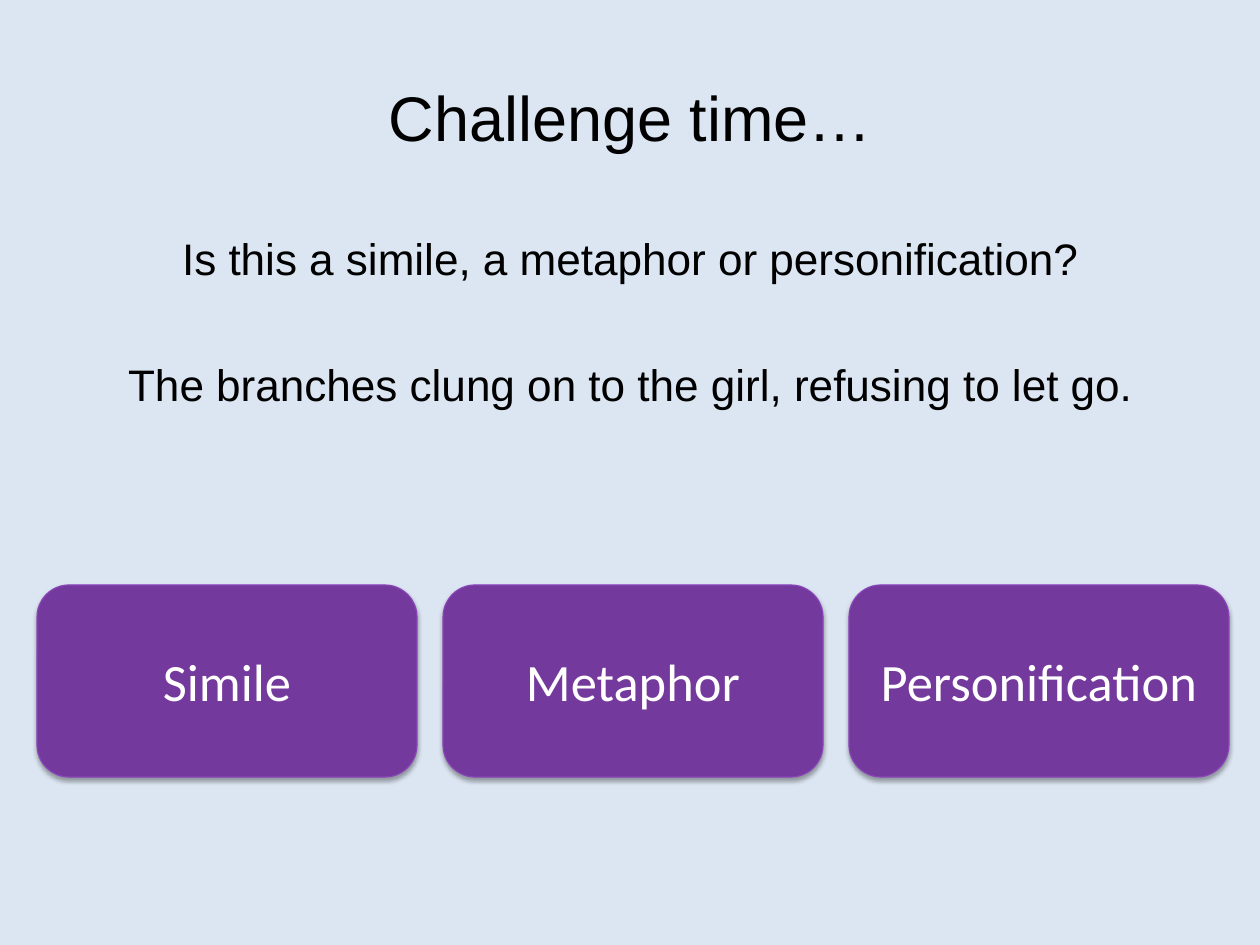
from lxml import etree
from pptx import Presentation
from pptx.dml.color import RGBColor
from pptx.enum.shapes import MSO_SHAPE
from pptx.enum.text import MSO_ANCHOR, PP_ALIGN
from pptx.oxml.ns import qn
from pptx.util import Pt

PX = 914400 / 113.4
ROUNDED = MSO_SHAPE.ROUNDED_RECTANGLE
MIDDLE, TOP = MSO_ANCHOR.MIDDLE, MSO_ANCHOR.TOP
CENTER = PP_ALIGN.CENTER

COLORS = {
    "background": "DCE6F2",
    "text": "000000",
    "button": "74399C",
    "button_edge": "8A44BA",
    "button_text": "FFFFFF",
    "shadow": "000000",
}
TITLE_FONT = {"name": "Arial", "size": Pt(40)}
QUESTION_FONT = {"name": "Arial", "size": Pt(28)}
ANSWER_FONT = {"name": "Calibri", "size": Pt(33.3)}

ANSWERS = ["Simile", "Metaphor", "Personification"]
ANSWER_LEFT, ANSWER_TOP = 37, 585
ANSWER_WIDTH, ANSWER_HEIGHT, ANSWER_GAP = 380, 192, 26


def px(length):
    return round(length * PX)


def color(key):
    return RGBColor.from_string(COLORS[key])


def write_lines(frame, lines, font, color_key, anchor=MIDDLE, gap=0):
    """Fill a frame with centred paragraphs, gap points apart."""
    frame.word_wrap = True
    frame.vertical_anchor = anchor
    for index, line in enumerate(lines):
        paragraph = frame.add_paragraph() if index else frame.paragraphs[0]
        paragraph.alignment = CENTER
        paragraph.space_before = Pt(gap if index else 0)
        run = paragraph.add_run()
        run.text = line
        for attribute, value in font.items():
            setattr(run.font, attribute, value)
        run.font.color.rgb = color(color_key)


def add_text(slide, box, lines, font, **layout):
    frame = slide.shapes.add_textbox(*map(px, box)).text_frame
    write_lines(frame, lines, font, "text", **layout)
    return frame


def add_soft_shadow(shape):
    """Cast a short blurred shadow straight down."""
    shape.shadow.inherit = False
    effects = shape._element.spPr.find(qn("a:effectLst"))
    shadow = etree.SubElement(
        effects, qn("a:outerShdw"), blurRad=str(Pt(3.1)), dist=str(Pt(1.8)),
        dir="5400000", rotWithShape="0")
    tint = etree.SubElement(shadow, qn("a:srgbClr"), val=COLORS["shadow"])
    etree.SubElement(tint, qn("a:alpha"), val="35000")


def add_answer(slide, box, answer):
    button = slide.shapes.add_shape(ROUNDED, *map(px, box))
    button.fill.solid()
    button.fill.fore_color.rgb = color("button")
    button.line.color.rgb = color("button_edge")
    button.line.width = Pt(0.75)
    add_soft_shadow(button)
    write_lines(button.text_frame, [answer], ANSWER_FONT, "button_text")


def main():
    deck = Presentation()
    deck.slide_width, deck.slide_height = px(1260), px(945)
    slide = deck.slides.add_slide(deck.slide_layouts[6])
    slide.background.fill.solid()
    slide.background.fill.fore_color.rgb = color("background")

    add_text(slide, (63, 37, 1134, 158), ["Challenge time…"], TITLE_FONT)
    question = add_text(
        slide, (63, 220, 1134, 624),
        ["Is this a simile, a metaphor or personification?",
         "The branches clung on to the girl, refusing to let go."],
        QUESTION_FONT, anchor=TOP, gap=46.5)
    question.margin_top = px(11)

    for column, answer in enumerate(ANSWERS):
        left = ANSWER_LEFT + column * (ANSWER_WIDTH + ANSWER_GAP)
        add_answer(slide, (left, ANSWER_TOP, ANSWER_WIDTH, ANSWER_HEIGHT), answer)

    deck.save("out.pptx")


if __name__ == "__main__":
    main()
